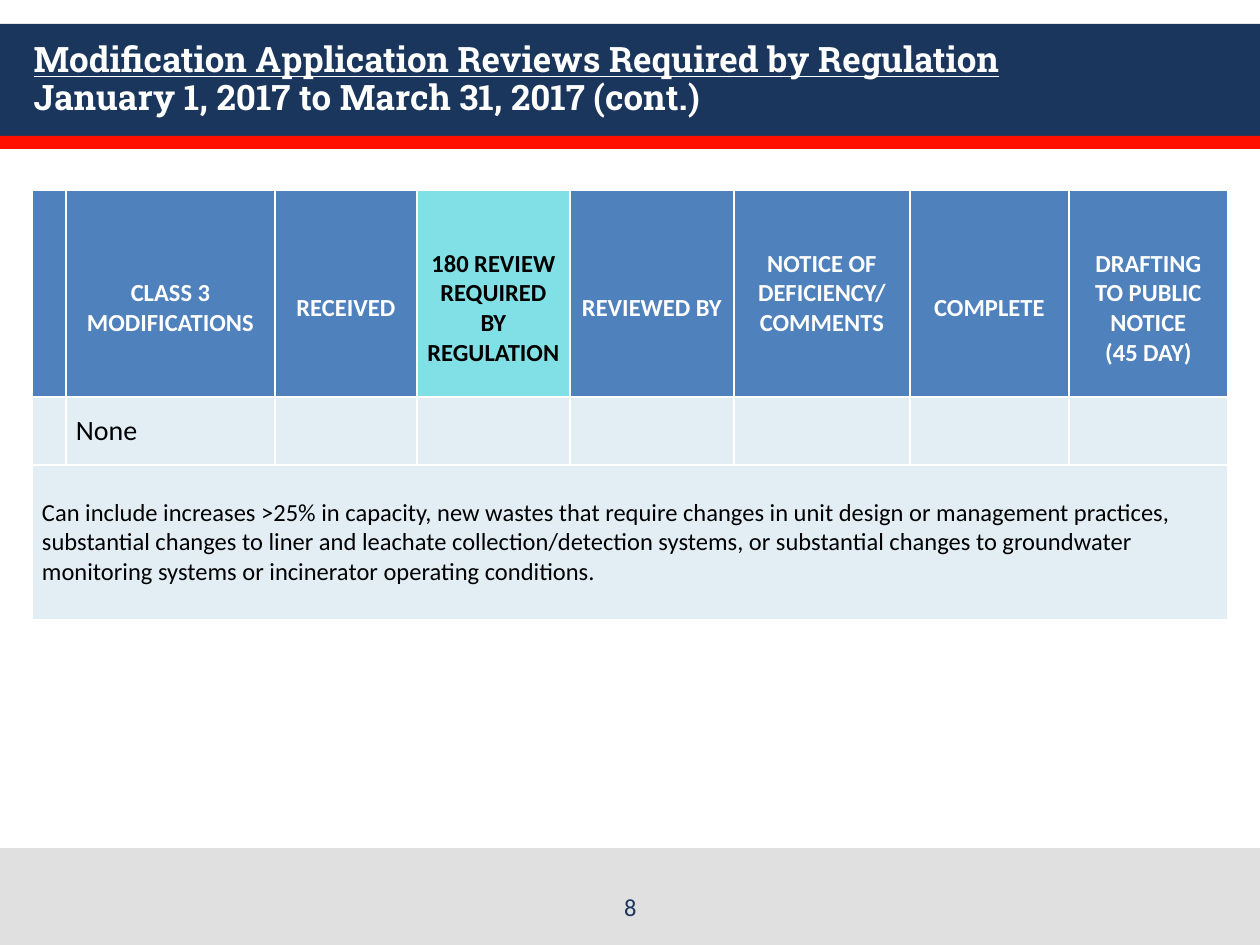
import pptx
import pptx.dml.color
import pptx.enum.shapes
import pptx.enum.text
import pptx.oxml
import pptx.oxml.ns
import pptx.util

RGBColor = pptx.dml.color.RGBColor
Align = pptx.enum.text.PP_ALIGN
Anchor = pptx.enum.text.MSO_ANCHOR

NAVY = RGBColor(0x1B, 0x36, 0x5D)
RED = RGBColor(0xFF, 0x0F, 0x00)
GRAY = RGBColor(0xE0, 0xE0, 0xE0)
BLUE = RGBColor(0x4F, 0x81, 0xBD)
AQUA = RGBColor(0x81, 0xE0, 0xE5)
PALE = RGBColor(0xE2, 0xED, 0xF4)
WHITE = RGBColor(0xFF, 0xFF, 0xFF)
BLACK = RGBColor(0x00, 0x00, 0x00)

PX_PER_INCH = 126
LINE = 30
COLUMN_WIDTHS = [34, 209, 142, 153, 164, 176, 159, 159]
ROW_HEIGHTS = [207, 68, 155]
HEADERS = [
    ("", BLUE, WHITE, 0),
    ("CLASS 3 MODIFICATIONS", BLUE, WHITE, LINE),
    ("RECEIVED", BLUE, WHITE, LINE),
    ("180 REVIEW REQUIRED BY REGULATION", AQUA, BLACK, LINE),
    ("REVIEWED BY", BLUE, WHITE, LINE),
    ("NOTICE OF DEFICIENCY/ COMMENTS", BLUE, WHITE, 0),
    ("COMPLETE", BLUE, WHITE, LINE),
    ("DRAFTING TO PUBLIC NOTICE\v(45 DAY)", BLUE, WHITE, LINE),
]
NOTE = (
    "Can include increases >25% in capacity, new wastes that require changes "
    "in unit design or management practices,\n"
    "substantial changes to liner and leachate collection/detection systems, "
    "or substantial changes to groundwater monitoring systems or incinerator "
    "operating conditions."
)


def px(length):
    return pptx.util.Inches(length / PX_PER_INCH)


def format_font(font, size=14, color=BLACK, name="Calibri", bold=False, underline=False):
    font.size = pptx.util.Pt(size)
    font.color.rgb = color
    font.name = name
    font.bold = bold
    font.underline = underline


def write_text(frame, text, align=Align.LEFT, **style):
    frame.word_wrap = True
    frame.text = text
    for para in frame.paragraphs:
        para.alignment = align
        format_font(para.font, **style)
        for span in para.runs:
            format_font(span.font, **style)


def add_band(page, top, height, color):
    band = page.shapes.add_shape(
        pptx.enum.shapes.MSO_SHAPE.RECTANGLE, 0, px(top), px(1260), px(height))
    band.shadow.inherit = False
    band.fill.solid()
    band.fill.fore_color.rgb = color
    band.line.fill.background()


def format_title(title):
    title.left, title.top, title.width, title.height = px(21), px(24), px(1218), px(113)
    frame = title.text_frame
    frame.word_wrap = True
    frame.auto_size = pptx.enum.text.MSO_AUTO_SIZE.NONE
    frame.vertical_anchor = Anchor.MIDDLE
    para = frame.paragraphs[0]
    para.alignment = Align.LEFT
    para.line_spacing = 0.9
    heading = para.add_run()
    heading.text = "Modification Application Reviews Required by Regulation"
    para.add_line_break()
    period = para.add_run()
    period.text = "January 1, 2017 to March 31, 2017 (cont.)"
    for span in (heading, period):
        format_font(span.font, size=20, color=WHITE, name="Roboto Slab",
                    bold=True, underline=span is heading)
    title.element.getparent().append(title.element)


def add_borders(cell):
    properties = cell._tc.get_or_add_tcPr()
    for side in ("lnL", "lnR", "lnT", "lnB"):
        properties.append(pptx.oxml.parse_xml(
            f'<a:{side} {pptx.oxml.ns.nsdecls("a")} w="12700"><a:solidFill>'
            f'<a:srgbClr val="{WHITE}"/></a:solidFill></a:{side}>'))


def fill_cell(cell, text="", fill=PALE, offset=0, **style):
    add_borders(cell)
    cell.fill.solid()
    cell.fill.fore_color.rgb = fill
    cell.vertical_anchor = Anchor.MIDDLE
    cell.margin_left = cell.margin_right = px(10)
    cell.margin_top, cell.margin_bottom = px(offset), 0
    write_text(cell.text_frame, text, **style)


def add_review_table(page):
    table = page.shapes.add_table(
        len(ROW_HEIGHTS), len(COLUMN_WIDTHS), px(32), px(190),
        px(sum(COLUMN_WIDTHS)), px(sum(ROW_HEIGHTS))).table
    for column, width in zip(table.columns, COLUMN_WIDTHS):
        column.width = px(width)
    for row, height in zip(table.rows, ROW_HEIGHTS):
        row.height = px(height)
    for index, (text, fill, color, offset) in enumerate(HEADERS):
        fill_cell(table.cell(0, index), text, fill, offset,
                  color=color, bold=True, align=Align.CENTER)
        fill_cell(table.cell(1, index), "None" if index == 1 else "", size=16)
        fill_cell(table.cell(2, index), NOTE if index == 0 else "")
    table.cell(2, 0).merge(table.cell(2, len(HEADERS) - 1))


def add_page_number(page):
    box = page.shapes.add_textbox(px(431), px(878), px(399), px(50))
    box.text_frame.vertical_anchor = Anchor.BOTTOM
    write_text(box.text_frame, "8", align=Align.CENTER, color=NAVY)


def main():
    deck = pptx.Presentation()
    deck.slide_width, deck.slide_height = px(1260), px(945)
    page = deck.slides.add_slide(deck.slide_layouts[5])
    add_band(page, 24, 112, NAVY)
    add_band(page, 136, 13, RED)
    add_band(page, 848, 97, GRAY)
    format_title(page.shapes.title)
    add_review_table(page)
    add_page_number(page)
    deck.save("out.pptx")


if __name__ == "__main__":
    main()
